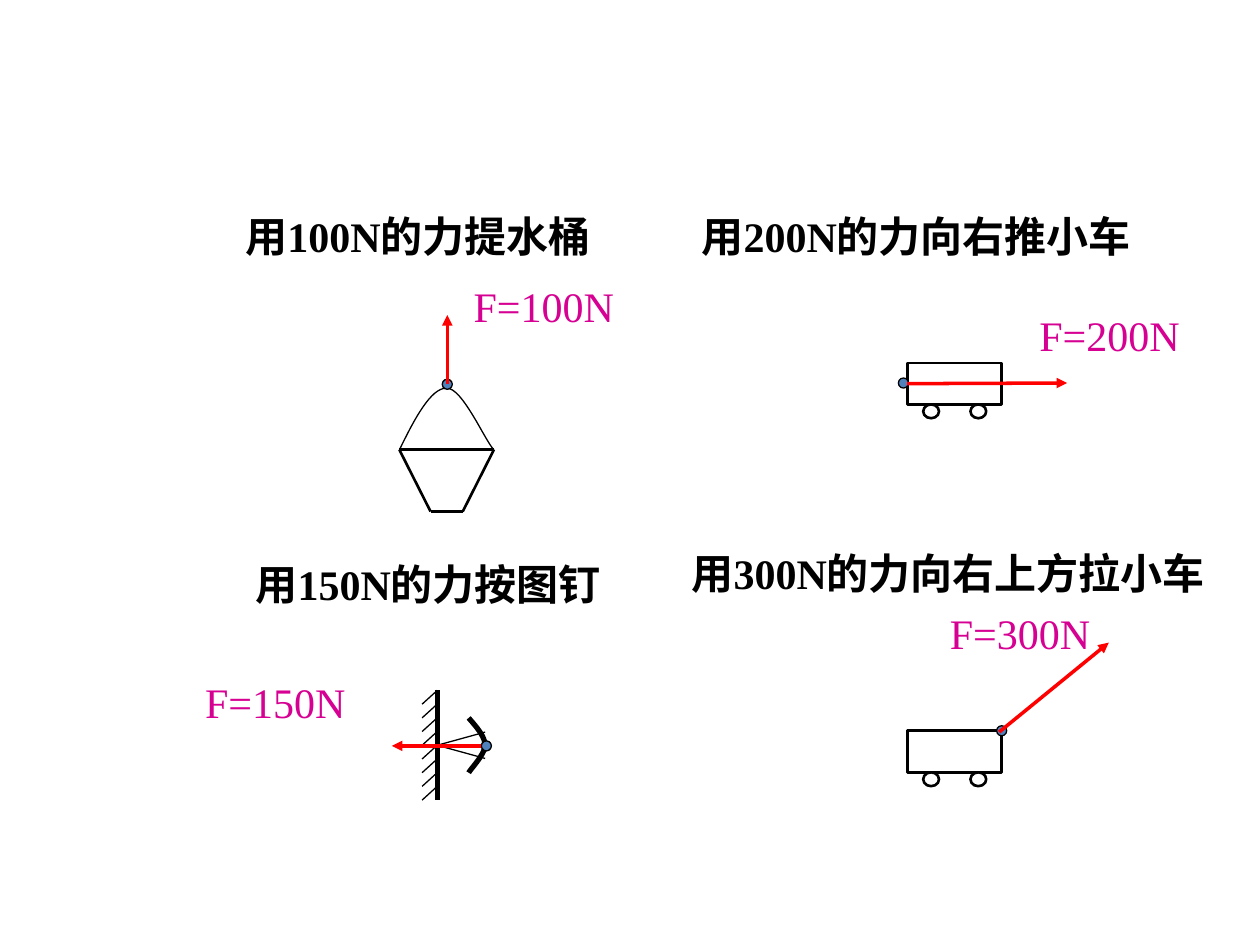
"""Build a slide with four force diagrams on a grid of 1000 columns by 750 rows."""
from lxml.etree import SubElement
from pptx import Presentation
from pptx.dml.color import RGBColor
from pptx.enum.shapes import MSO_CONNECTOR as Link, MSO_SHAPE as Kind
from pptx.oxml.ns import qn
from pptx.util import Inches, Pt

BLACK = RGBColor(0, 0, 0)
WHITE = RGBColor(255, 255, 255)
RED = RGBColor(255, 0, 0)
BLUE = RGBColor(0x4F, 0x81, 0xBD)
PINK = RGBColor(0xD6, 0x00, 0x93)
FONT = "Times New Roman"
WIDE, HIGH = Inches(10), Inches(7.5)
COLS, ROWS = 1000, 750


def col(n):
    """Turn columns into a length."""
    return round(n * WIDE / COLS)


def row(n):
    """Turn rows into a length."""
    return round(n * HIGH / ROWS)


def place(box, x, y):
    """Find a grid point from shares of a box."""
    left, top, wide, high = box
    return left + x * wide, top + y * high


def text(slide, left, top, wide, words, color, bold=False):
    """Add one line of 24 point text; bold captions wrap."""
    shape = slide.shapes.add_textbox(col(left), row(top), col(wide), row(50))
    frame = shape.text_frame
    frame.word_wrap = bold
    run = frame.paragraphs[0].add_run()
    run.text = words
    font = run.font
    font.name, font.size, font.bold = FONT, Pt(24), bold
    font.color.rgb = color


def line(slide, start, end, width, color=BLACK):
    """Draw a straight line between two grid points."""
    link = slide.shapes.add_connector(
        Link.STRAIGHT, col(start[0]), row(start[1]), col(end[0]), row(end[1]))
    link.line.color.rgb = color
    link.line.width = Pt(width)
    SubElement(link._element.spPr, qn("a:effectLst"))
    return link


def shape(slide, kind, box, fill, width):
    """Draw a filled shape with a black outline."""
    left, top, wide, high = box
    item = slide.shapes.add_shape(kind, col(left), row(top), col(wide), row(high))
    item.shadow.inherit = False
    item.fill.solid()
    item.fill.fore_color.rgb = fill
    item.line.color.rgb = BLACK
    item.line.width = Pt(width)
    return item


def curve(slide, box, knots, width, steps=16):
    """Draw joined cubic curves through every third knot."""
    spots = [place(box, *knot) for knot in knots]
    path = [spots[0]]
    for i in range(0, len(spots) - 1, 3):
        a, b, c, d = spots[i:i + 4]
        for n in range(1, steps + 1):
            t = n / steps
            u = 1 - t
            path.append(tuple(
                u**3 * a[k] + 3 * u * u * t * b[k] + 3 * u * t * t * c[k] + t**3 * d[k]
                for k in (0, 1)))
    ends = [(col(x), row(y)) for x, y in path]
    build = slide.shapes.build_freeform(*ends[0])
    build.add_line_segments(ends[1:], close=False)
    item = build.convert_to_shape()
    item.shadow.inherit = False
    item.fill.background()
    item.line.color.rgb = BLACK
    item.line.width = Pt(width)


def force(slide, dot, start, end):
    """Draw the point of action and the force arrow."""
    x, y = dot
    shape(slide, Kind.OVAL, (x - 4, y - 4, 8, 8), BLUE, 0.75)
    arrow = line(slide, start, end, 2, RED)
    SubElement(arrow.line._get_or_add_ln(), qn("a:tailEnd"), type="triangle")
    return arrow


def bucket(slide, box):
    """Draw a bucket with its handle, pulled up."""
    curve(slide, box, [(0, 0.5), (0.16, 0.25), (0.33, 0), (0.5, 0),
                       (0.67, 0), (0.9, 0.42), (1, 0.5)], 0.75)
    rim, base = [(0, 0.5), (1, 0.5)], [(0.33, 1), (0.67, 1)]
    for start, end in (rim, (rim[0], base[0]), (rim[1], base[1]), base):
        line(slide, place(box, *start), place(box, *end), 1.5)
    force(slide, (355, 305), (355, 305), (355, 250))


def cart(slide, box):
    """Draw a cart on two wheels and return its body."""
    left, top, wide, high = box
    body = shape(slide, Kind.RECTANGLE, (left, top, wide, high * 0.75), WHITE, 1.5)
    for x in (0.17, 0.67):
        spot = place(box, x, 0.75)
        shape(slide, Kind.OVAL, (*spot, wide / 6, high / 4), WHITE, 1.5)
    return body


def push(slide, box):
    """Draw a cart pushed to the right."""
    body = cart(slide, box)
    arrow = force(slide, (717, 304), (720, 304), (847, 304))
    arrow.begin_connect(body, 1)


def pull(slide, box):
    """Draw a cart pulled up to the right."""
    cart(slide, box)
    force(slide, (795, 580), (793, 581), (880, 510))


def pin(slide, box, marks=8):
    """Draw a pin pressed into a hatched wall."""
    wall = 0.24
    line(slide, place(box, wall, 0), place(box, wall, 1), 3)
    for n in range(marks):
        line(slide, place(box, wall, n / marks), place(box, 0, (n + 1) / marks), 0.75)
    for y in (0.38, 0.62):
        line(slide, place(box, wall, 0.5), place(box, 1, y), 0.75)
    curve(slide, box, [(0.74, 0.25), (0.86, 0.33), (1, 0.42), (1, 0.5),
                       (1, 0.58), (0.78, 0.71), (0.74, 0.75)], 3)
    force(slide, (386, 592), (382, 592), (311, 592))


def main():
    """Build and save the slide."""
    deck = Presentation()
    deck.slide_width, deck.slide_height = WIDE, HIGH
    slide = deck.slides.add_slide(deck.slide_layouts[6])
    panels = [
        (bucket, (317, 308, 75, 98), (185, 162, 304), "用100N的力提水桶", (366, 218), "F=100N"),
        (push, (720, 288, 75, 44), (547, 162, 371), "用200N的力向右推小车", (815, 241), "F=200N"),
        (pin, (335, 548, 50, 87), (193, 438, 304), "用150N的力按图钉", (153, 532), "F=150N"),
        (pull, (720, 580, 75, 44), (539, 430, 438), "用300N的力向右上方拉小车", (744, 477), "F=300N"),
    ]
    for draw, box, head, words, spot, label in panels:
        text(slide, *head, words, BLACK, True)
        draw(slide, box)
        text(slide, *spot, 132, label, PINK)
    deck.save("out.pptx")


if __name__ == "__main__":
    main()
